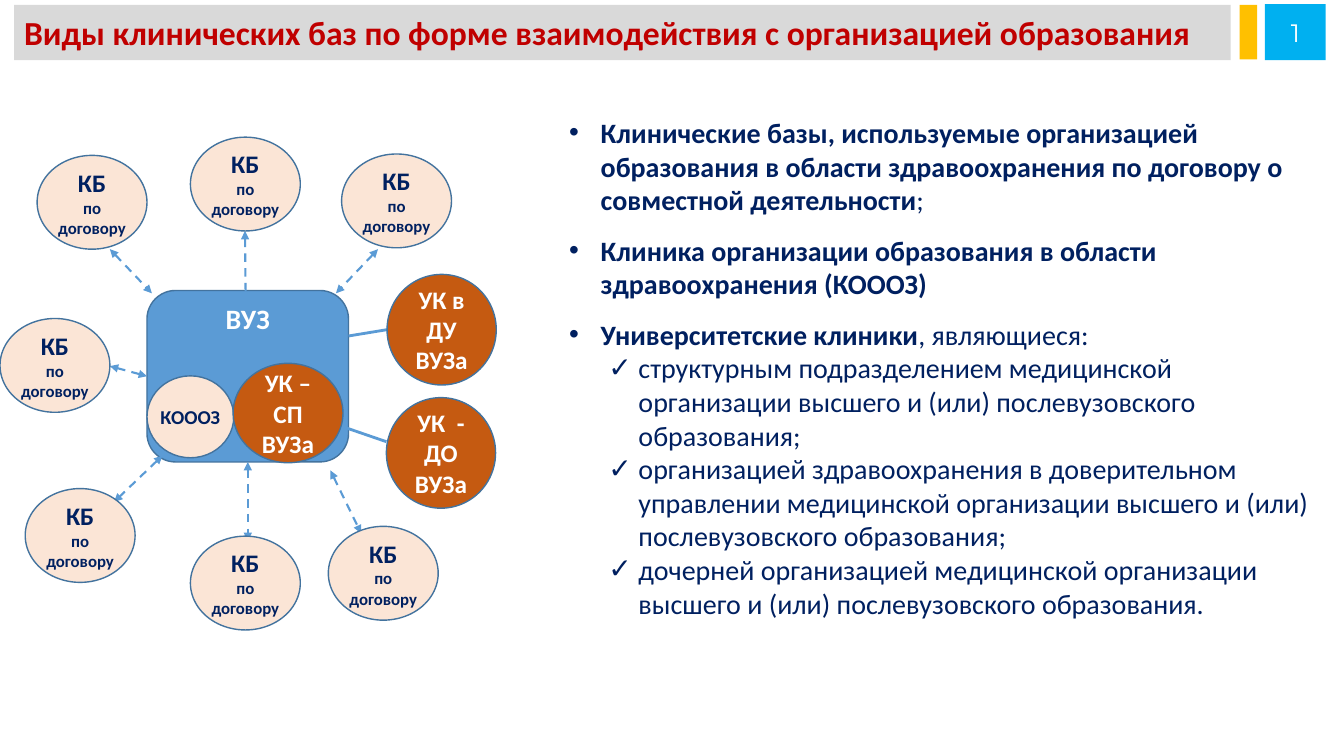
from lxml.etree import SubElement
from pptx import Presentation
from pptx.dml.color import RGBColor
from pptx.enum.dml import MSO_LINE as Dash
from pptx.enum.shapes import MSO_CONNECTOR as Conn, MSO_SHAPE as Form
from pptx.enum.text import MSO_ANCHOR as Anchor, MSO_AUTO_SIZE as Fit, PP_ALIGN as Align
from pptx.oxml.ns import qn
from pptx.util import Pt

NAVY, WHITE, BLUE, EDGE = "002060", "FFFFFF", "5B9BD5", "43739E"
PEACH, RUST = "FBE5D6", "C55A11"

BASES = [(136, 98), (26.5, 111), (0, 227.5), (244, 110),
         (234.5, 376), (136, 383), (18, 349)]
CLINICS = [("УК – СП ВУЗа", 166.5, 259.5, 78.5, 71),
           ("УК в ДУ ВУЗа", 276.5, 196, 78, 79),
           ("УК  - ДО ВУЗа", 276, 284, 78, 79)]
ARROWS = [(270, 178, 240, 209.5), (175, 165, 175.5, 216),
          (78.5, 178, 108.5, 209.5), (116, 325.5, 81.5, 358.5),
          (236, 336, 258, 381)]
JOINED = [(1, 105, 268.5, 78.5, 261.5), (2, 177, 330, 177, 386.5)]
LINKS = [(276.5, 235.5, 249, 240), (276, 315.5, 244, 304.5)]
POINTS = [
    [("Клинические базы, используемые организацией образования в области "
      "здравоохранения по договору о совместной деятельности", True), (";", False)],
    [("Клиника организации образования в области здравоохранения (КОООЗ)", True)],
    [("Университетские клиники", True), (", являющиеся:", False)],
]
KINDS = [
    "структурным подразделением медицинской организации высшего и (или) "
    "послевузовского образования;",
    "организацией здравоохранения в доверительном управлении медицинской "
    "организации высшего и (или) послевузовского образования;",
    "дочерней организацией медицинской организации высшего и (или) "
    "послевузовского образования.",
]


def tint(code):
    return RGBColor.from_string(code)


def write(para, text, size, color, bold=True, face="Calibri"):
    run = para.add_run()
    run.text = text
    font = run.font
    font.name, font.size, font.bold = face, Pt(size), bold
    font.color.rgb = tint(color)


def place(shape, *box):
    shape.left, shape.top, shape.width, shape.height = map(Pt, box)


def paint(shape, fill, edge=None):
    shape.fill.solid()
    shape.fill.fore_color.rgb = tint(fill)
    if edge:
        shape.line.color.rgb = tint(edge)
        shape.line.width = Pt(1)
    else:
        shape.line.fill.background()


def block(slide, form, box, fill, edge=None):
    shape = slide.shapes.add_shape(form, *map(Pt, box))
    shape.shadow.inherit = False
    paint(shape, fill, edge)
    frame = shape.text_frame
    frame.word_wrap = True
    frame.vertical_anchor = Anchor.MIDDLE
    frame.paragraphs[0].alignment = Align.CENTER
    return shape


def oval(slide, box, fill, color, rows):
    frame = block(slide, Form.OVAL, box, fill, EDGE).text_frame
    frame.margin_left = frame.margin_right = 0
    for n, (text, size) in enumerate(rows):
        para = frame.add_paragraph() if n else frame.paragraphs[0]
        para.alignment = Align.CENTER
        write(para, text, size, color)


def link(slide, ends, width=2, arrow=False):
    line = slide.shapes.add_connector(Conn.STRAIGHT, *map(Pt, ends))
    line.line.color.rgb = tint(BLUE)
    line.line.width = Pt(width)
    if arrow:
        line.line.dash_style = Dash.DASH
        pen = line.line._get_or_add_ln()
        for tag in ("a:headEnd", "a:tailEnd"):
            SubElement(pen, qn(tag), type="triangle")
    SubElement(line._element.spPr, qn("a:effectLst"))
    return line


def bullet(para, mark, left, hang):
    props = para._p.get_or_add_pPr()
    props.set("marL", str(Pt(left)))
    props.set("indent", str(-Pt(hang)))
    SubElement(props, qn("a:buFont"), typeface="Arial")
    SubElement(props, qn("a:buChar"), char=mark)


def head(slide):
    title = slide.shapes.title
    place(title, 10, 3.5, 869, 39.5)
    paint(title, "D9D9D9")
    frame = title.text_frame
    frame.auto_size = Fit.NONE
    frame.word_wrap = True
    frame.vertical_anchor = Anchor.MIDDLE
    para = frame.paragraphs[0]
    para.alignment = Align.LEFT
    write(para, "Виды клинических баз по форме взаимодействия с организацией "
          "образования", 24, "C00000")
    block(slide, Form.RECTANGLE, (885.5, 3.5, 12.5, 39), "FFC000")
    page = block(slide, Form.RECTANGLE, (903.5, 3, 43.5, 40), "00B0F0")
    write(page.text_frame.paragraphs[0], "1", 18, WHITE, False, "Montserrat")


def scheme(slide):
    hub = block(slide, Form.ROUNDED_RECTANGLE, (105, 207.5, 144, 122.5), BLUE, EDGE)
    hub.text_frame.vertical_anchor = Anchor.TOP
    hub.text_frame.margin_top = Pt(2)
    write(hub.text_frame.paragraphs[0], "ВУЗ", 20, WHITE)
    for ends in LINKS:
        link(slide, ends)
    for ends in ARROWS:
        link(slide, ends, 1.5, True)
    for side, *ends in JOINED:
        link(slide, ends, 1.5, True).begin_connect(hub, side)
    oval(slide, (105, 268.5, 62, 58.5), PEACH, NAVY, [("КОООЗ", 14)])
    for text, *box in CLINICS:
        oval(slide, box, RUST, WHITE, [(text, 18)])
    for left, top in BASES:
        oval(slide, (left, top, 78.5, 67), PEACH, NAVY,
             [("КБ", 18), ("по договору", 12)])


def notes(slide):
    frame = slide.shapes.add_textbox(*map(Pt, (399.5, 79, 546.5, 371))).text_frame
    frame.word_wrap = True
    rows = [(runs, "•", 22.5, 22.5, 12) for runs in POINTS]
    rows += [([(text, False)], "✓", 49.5, 21.5, 0) for text in KINDS]
    for n, (runs, mark, left, hang, gap) in enumerate(rows):
        para = frame.add_paragraph() if n else frame.paragraphs[0]
        para.space_before = Pt(gap)
        bullet(para, mark, left, hang)
        for text, bold in runs:
            write(para, text, 20, NAVY, bold)


def main():
    deck = Presentation()
    deck.slide_width, deck.slide_height = Pt(960), Pt(540)
    slide = deck.slides.add_slide(deck.slide_layouts[5])
    head(slide)
    scheme(slide)
    notes(slide)
    deck.save("out.pptx")


if __name__ == "__main__":
    main()
